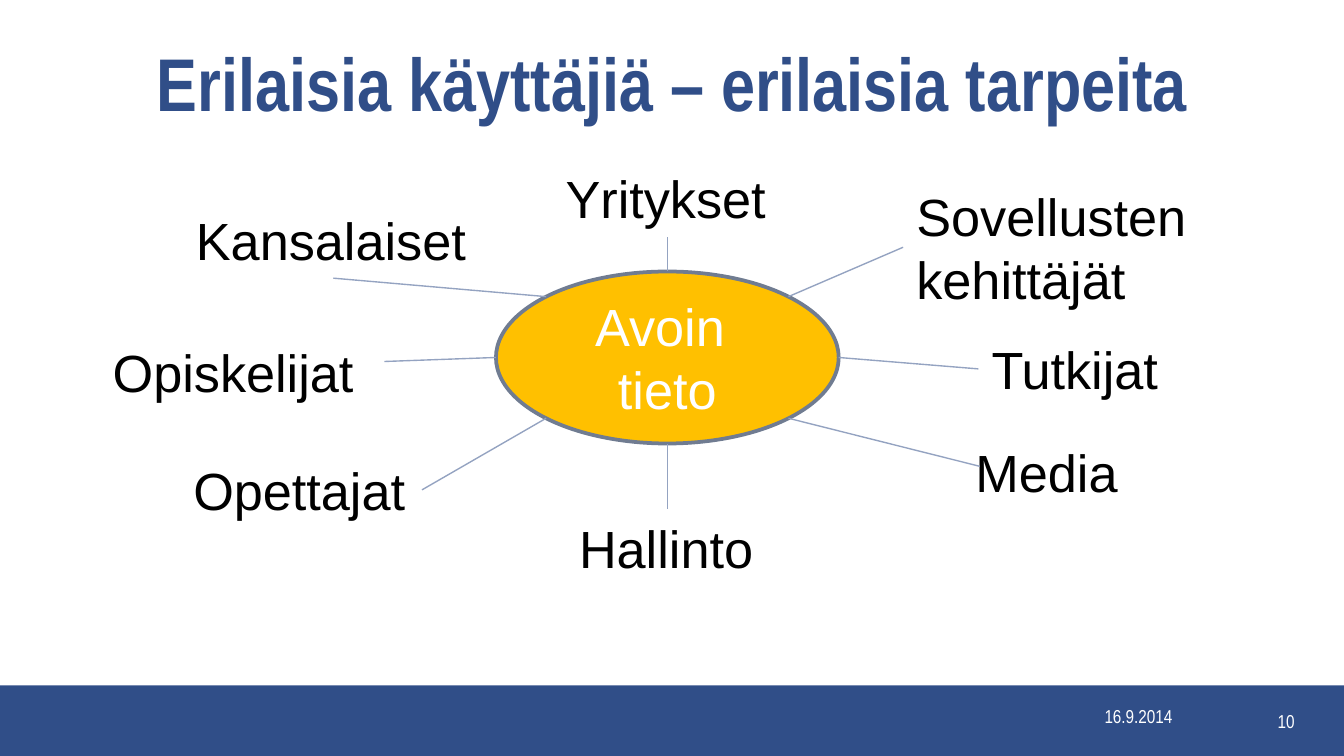
import math

import pptx
import pptx.dml.color
import pptx.enum.shapes
import pptx.enum.text
import pptx.oxml
import pptx.oxml.ns
import pptx.util

CELL = pptx.util.Inches(0.1)
COLUMNS, ROWS = 100, 56.25
BLUE, WHITE, BLACK = "304E88", "FFFFFF", "000000"
AMBER, OUTLINE, SPOKE = "FFC000", "707C91", "94A3C1"
TOP, LEFT, BOTTOM, RIGHT = range(4)
ALIGN = pptx.enum.text.PP_ALIGN
ANCHOR = pptx.enum.text.MSO_ANCHOR

USER_GROUPS = [
    ("Sovellusten\nkehittäjät", (59.8, 1.3, 23.4, 10.4), 45, LEFT),
    ("Yritykset", (33.7, 0, 17.1, 5.7), 90, BOTTOM),
    ("Kansalaiset", (6.2, 3.1, 22.4, 5.7), 135, BOTTOM),
    ("Opiskelijat", (0, 12.9, 20.2, 5.7), 180, (21.2, 15)),
    ("Opettajat", (6, 21.7, 18, 5.7), 225, RIGHT),
    ("Hallinto", (34.7, 26, 15.1, 5.7), 270, TOP),
    ("Tutkijat", (65.4, 12.7, 14.5, 5.7), 0, LEFT),
    ("Media", (64.2, 20.4, 12.7, 5.7), 315, (65.5, 22.8)),
]


def color(hex_value):
    """Return the colour for a hex string."""
    return pptx.dml.color.RGBColor.from_string(hex_value)


def cells(*counts):
    """Turn grid cells into slide lengths."""
    return [round(count * CELL) for count in counts]


def within(box, part):
    """Move a part's offset by the corner of its region."""
    return (box[0] + part[0], box[1] + part[1], *part[2:])


def write(frame, text, size, font, hex_value, align=ALIGN.LEFT, bold=False):
    """Fill a text frame and format all its runs."""
    frame.text = text
    for paragraph in frame.paragraphs:
        paragraph.alignment = align
        for run in paragraph.runs:
            run.font.size = pptx.util.Pt(size)
            run.font.name = font
            run.font.bold = bold
            run.font.color.rgb = color(hex_value)


def add_title(slide, box):
    """Place the heading in the title placeholder."""
    heading = slide.shapes.title
    heading.left, heading.top, heading.width, heading.height = cells(*box)
    heading.text_frame.vertical_anchor = ANCHOR.MIDDLE
    write(heading.text_frame, "Erilaisia käyttäjiä – erilaisia tarpeita",
          40, "Arial Narrow", BLUE, ALIGN.CENTER, True)


def add_footer(slide, box):
    """Draw the footer band with its page number and date."""
    band = slide.shapes.add_shape(pptx.enum.shapes.MSO_SHAPE.RECTANGLE, *cells(*box))
    band.shadow.inherit = False
    band.fill.solid()
    band.fill.fore_color.rgb = color(BLUE)
    band.line.fill.background()
    for text, part, align, anchor in (
        ("10", (92, 1.3, 5.3, 1.7), ALIGN.RIGHT, ANCHOR.TOP),
        ("16.9.2014", (81.2, 1.4, 9.3, 1.8), ALIGN.LEFT, ANCHOR.MIDDLE),
    ):
        note = slide.shapes.add_textbox(*cells(*within(box, part)))
        note.text_frame.word_wrap = True
        note.text_frame.vertical_anchor = anchor
        write(note.text_frame, text, 10, "Arial Narrow", WHITE, align)


def add_hub(slide, box):
    """Draw the central ellipse."""
    hub = slide.shapes.add_shape(pptx.enum.shapes.MSO_SHAPE.OVAL, *cells(*box))
    hub.shadow.inherit = False
    hub.fill.solid()
    hub.fill.fore_color.rgb = color(AMBER)
    hub.line.color.rgb = color(OUTLINE)
    hub.line.width = pptx.util.Pt(2)
    hub.text_frame.vertical_anchor = ANCHOR.MIDDLE
    write(hub.text_frame, "Avoin \ntieto", 28, "Arial", WHITE, ALIGN.CENTER)


def add_label(slide, box, text):
    """Place the name of one user group."""
    label = slide.shapes.add_textbox(*cells(*box))
    label.text_frame.word_wrap = False
    label.text_frame.auto_size = pptx.enum.text.MSO_AUTO_SIZE.SHAPE_TO_FIT_TEXT
    write(label.text_frame, text, 28, "Arial", BLACK)
    return label


def add_spoke(slide, start, end):
    """Draw a thin line between two grid points."""
    spoke = slide.shapes.add_connector(
        pptx.enum.shapes.MSO_CONNECTOR.STRAIGHT, *cells(*start, *end))
    spoke.line.color.rgb = color(SPOKE)
    spoke.line.width = pptx.util.Pt(0.75)
    spoke._element.spPr.append(
        pptx.oxml.parse_xml(f'<a:effectLst {pptx.oxml.ns.nsdecls("a")}/>'))
    return spoke


def rim_point(box, degrees):
    """Return the point of an ellipse's rim at an angle."""
    left, top, width, height = box
    angle = math.radians(degrees)
    return (left + width / 2 * (1 + math.cos(angle)),
            top + height / 2 * (1 - math.sin(angle)))


def add_user_map(slide, box):
    """Draw the hub, the user groups around it and their spokes."""
    hub_box = within(box, (29.5, 8.3, 25.5, 12.8))
    add_hub(slide, hub_box)
    for text, part, degrees, target in USER_GROUPS:
        label = add_label(slide, within(box, part), text)
        start = rim_point(hub_box, degrees)
        if isinstance(target, tuple):
            add_spoke(slide, start, within(box, target))
        else:
            add_spoke(slide, start, start).end_connect(label, target)


def main():
    """Build and save the slide."""
    deck = pptx.Presentation()
    deck.slide_width, deck.slide_height = cells(COLUMNS, ROWS)
    slide = deck.slides.add_slide(deck.slide_layouts[5])
    add_footer(slide, (0, 51, COLUMNS, ROWS - 51))
    add_title(slide, (6.5, 1.9, 87, 8.3))
    add_user_map(slide, (7.4, 11.9, 83.2, 31.7))
    deck.save("out.pptx")


if __name__ == "__main__":
    main()
